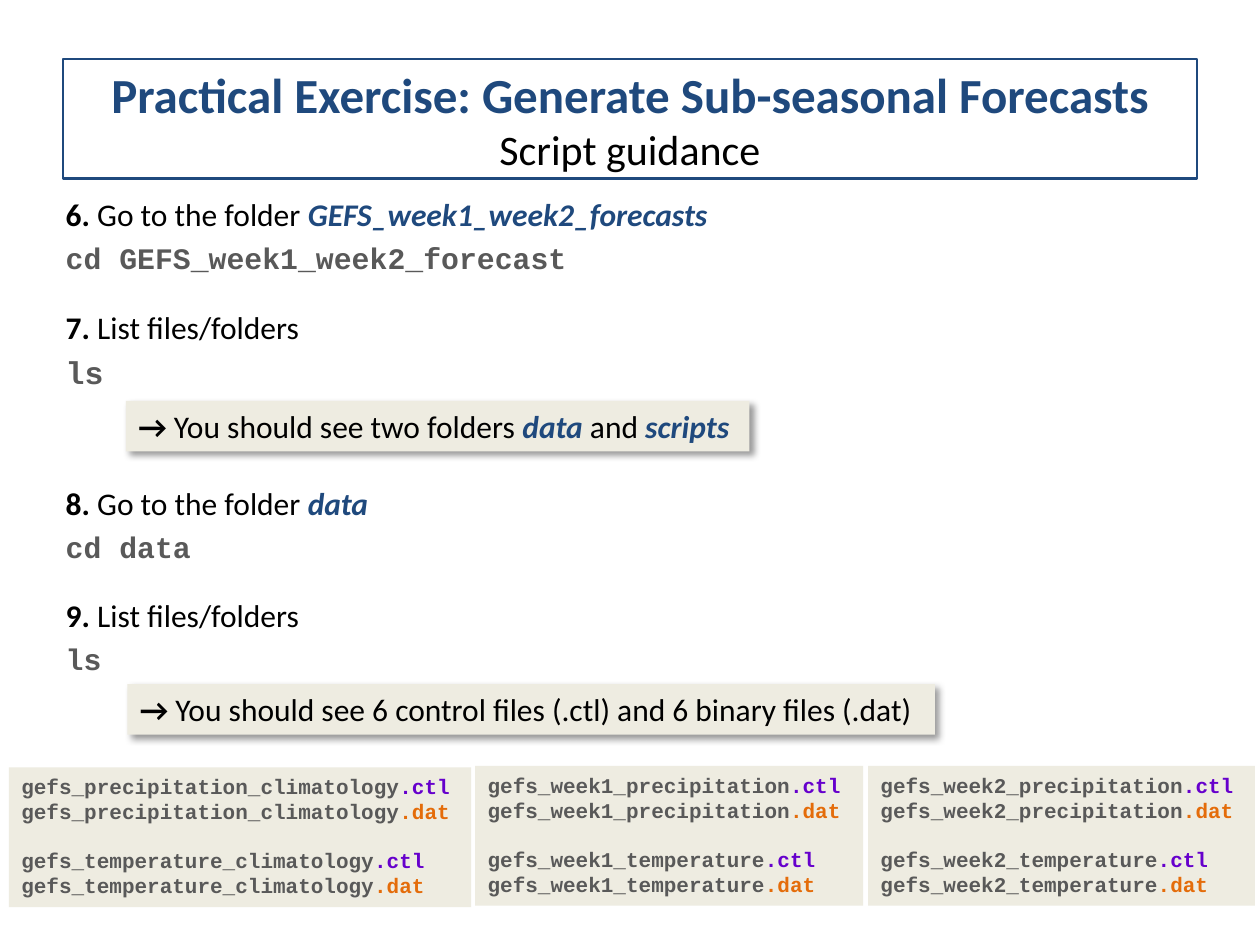
import pptx
import pptx.util
import pptx.dml.color
import pptx.enum.text
import pptx.enum.shapes
import pptx.oxml
import pptx.oxml.ns

Cm, Pt = pptx.util.Cm, pptx.util.Pt
SANS, MONO = "Calibri", "Courier New"
BLACK, NAVY, GREY, BEIGE = "000000", "1F497D", "595959", "EEECE1"
PURPLE, ORANGE = "6600CC", "E46C0A"


def paint(color, code):
    color.rgb = pptx.dml.color.RGBColor.from_string(code)


def style(run, size, code, face=SANS, bold=False, slant=False):
    font = run.font
    font.size, font.name, font.bold, font.italic = Pt(size), face, bold, slant
    paint(font.color, code)


def write(para, parts):
    """Each part is a text followed by the arguments of style."""
    for text, *look in parts:
        run = para.add_run()
        run.text = text
        style(run, *look)


def place(shape, left, top, width, height):
    shape.left, shape.top = Cm(left), Cm(top)
    shape.width, shape.height = Cm(width), Cm(height)


def plain(text):
    return text, 18, BLACK


def strong(text):
    return text, 18, BLACK, SANS, True


def name(text):
    return text, 18, NAVY, SANS, True, True


def code(text, size=17):
    return text, size, GREY, MONO, True


def add_title(slide):
    title = slide.shapes.title
    place(title, 1.27, 1.19, 22.86, 2.41)
    paint(title.line.color, NAVY)
    title.line.width = Pt(1.5)
    frame = title.text_frame
    frame.auto_size = pptx.enum.text.MSO_AUTO_SIZE.NONE
    frame.text = "Practical Exercise: Generate Sub-seasonal Forecasts\vScript guidance"
    head, sub = frame.paragraphs[0].runs
    style(head, 28, NAVY, SANS, True)
    style(sub, 24, BLACK)


def add_steps(slide, steps):
    """Each step has the gap above it, its wording and its command."""
    body = slide.placeholders[1]
    place(body, 1.07, 3.81, 22.86, 11.35)
    frame = body.text_frame
    frame.auto_size = pptx.enum.text.MSO_AUTO_SIZE.NONE
    lines = []
    for gap, words, command in steps:
        lines += [(gap, words), (4, [command])]
    for i, (gap, parts) in enumerate(lines):
        para = frame.add_paragraph() if i else frame.paragraphs[0]
        para.space_before = Pt(gap)
        props = para._p.get_or_add_pPr()
        props.set("marL", "0")
        props.set("indent", "0")
        props.append(pptx.oxml.parse_xml(
            f"<a:buNone {pptx.oxml.ns.nsdecls('a')}/>"))
        write(para, parts)


def add_box(slide, left, top, width, height):
    kind = pptx.enum.shapes.MSO_SHAPE.RECTANGLE
    box = slide.shapes.add_shape(
        kind, Cm(left), Cm(top), Cm(width), Cm(height))
    box.shadow.inherit = False
    box.fill.solid()
    paint(box.fill.fore_color, BEIGE)
    box.line.fill.background()
    box.text_frame.vertical_anchor = pptx.enum.text.MSO_ANCHOR.TOP
    return box


def add_note(slide, left, top, width, parts):
    box = add_box(slide, left, top, width, 1.02)
    box.text_frame.word_wrap = False
    # Soft shadow to the lower right
    effect = box._element.spPr.find(pptx.oxml.ns.qn("a:effectLst"))
    effect.append(pptx.oxml.parse_xml(
        f"<a:outerShdw {pptx.oxml.ns.nsdecls('a')} blurRad='{Pt(4)}' "
        f"dist='{Pt(3)}' dir='2700000' algn='tl' rotWithShape='0'>"
        "<a:srgbClr val='000000'><a:alpha val='40000'/></a:srgbClr>"
        "</a:outerShdw>"))
    para = box.text_frame.paragraphs[0]
    para.alignment = pptx.enum.text.PP_ALIGN.LEFT
    write(para, [strong("→")] + parts)


def add_files(slide, left, top, width, stems):
    frame = add_box(slide, left, top, width, 2.82).text_frame
    frame.word_wrap = True
    ends = [(".ctl", PURPLE), (".dat", ORANGE)]
    rows = [(stem, end, hue) for stem in stems for end, hue in ends]
    for i, (stem, end, hue) in enumerate(rows):
        para = frame.add_paragraph() if i else frame.paragraphs[0]
        para.alignment = pptx.enum.text.PP_ALIGN.LEFT
        if i == len(ends):
            para.space_before = Pt(13.6)
        write(para, [code(stem, 12), (end, 12, hue, MONO, True)])


def main():
    deck = pptx.Presentation()
    deck.slide_width, deck.slide_height = Cm(25.4), Cm(19.05)
    slide = deck.slides.add_slide(deck.slide_layouts[1])

    # Numbered steps, with room for a note after step 7
    add_steps(slide, [
        (0, [strong("6. "), plain("Go to the folder "),
             name("GEFS_week1_week2_forecasts")],
         code("cd GEFS_week1_week2_forecast")),
        (18.5, [strong("7. "), plain("List files/folders")], code("ls", 18)),
        (53, [strong("8. "), plain("Go to the folder "), name("data")],
         code("cd data")),
        (18, [strong("9. "), plain("List files/folders")], code("ls")),
    ])
    add_title(slide)

    # Expected results
    add_note(slide, 2.54, 8.08, 12.57, [
        plain(" You should see two folders "), name("data "),
        plain("and "), name("scripts")])
    add_note(slide, 2.57, 13.79, 16.28, [
        plain(" You should see 6 control files (.ctl) and 6 binary files (.dat)")])

    # File lists
    for left, top, width, form in [
            (0.18, 15.47, 9.32, "gefs_{}_climatology"),
            (9.58, 15.44, 7.82, "gefs_week1_{}"),
            (17.5, 15.44, 7.8, "gefs_week2_{}")]:
        stems = [form.format(field) for field in ("precipitation", "temperature")]
        add_files(slide, left, top, width, stems)

    deck.save("out.pptx")


if __name__ == "__main__":
    main()
